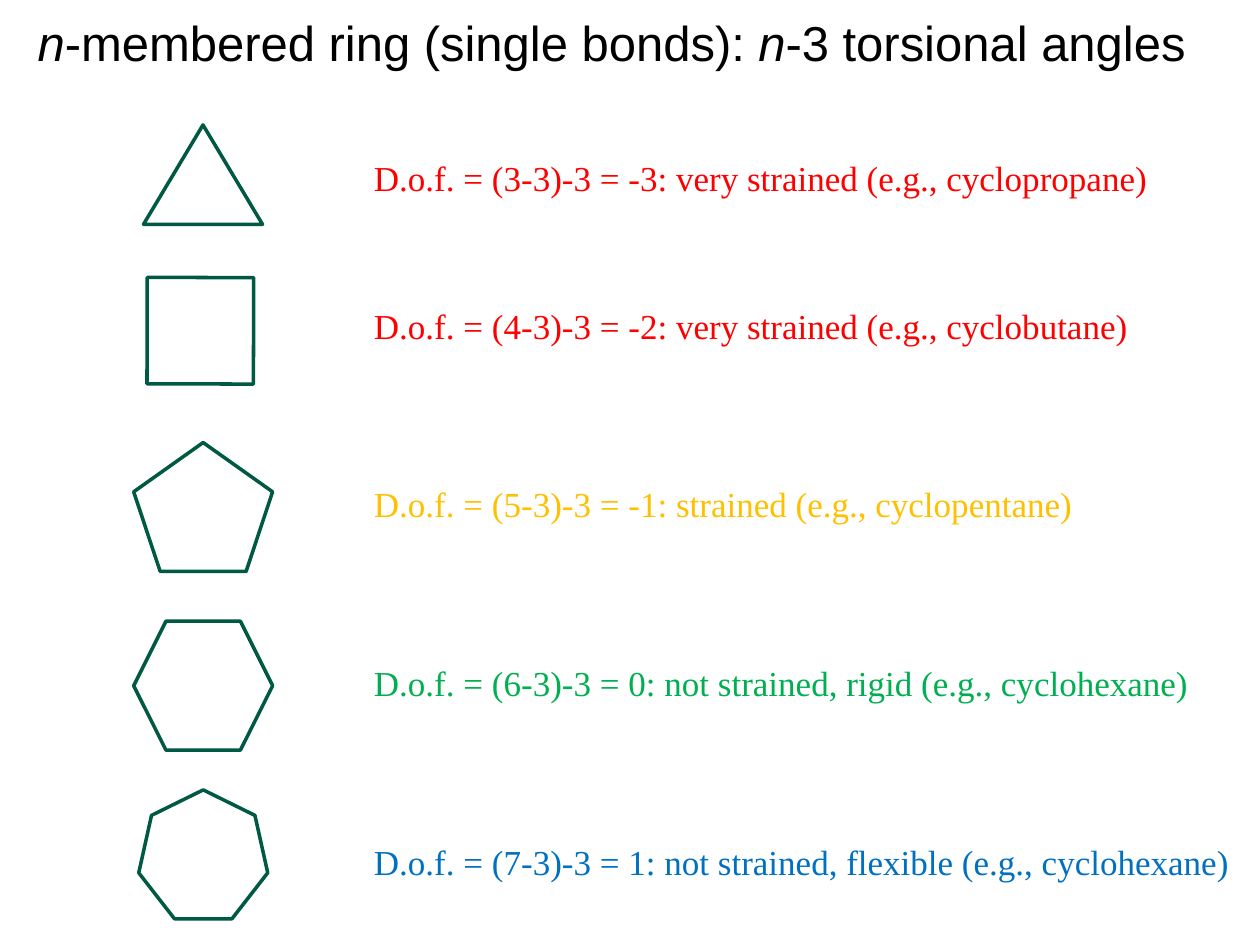
from pptx import Presentation
from pptx.dml.color import RGBColor
from pptx.enum.shapes import MSO_SHAPE
from pptx.enum.text import MSO_AUTO_SIZE
from pptx.util import Pt

BLACK = RGBColor(0x00, 0x00, 0x00)
PINE = RGBColor(0x00, 0x59, 0x43)
RED = RGBColor(0xFF, 0x00, 0x00)
AMBER = RGBColor(0xFF, 0xC0, 0x00)
GREEN = RGBColor(0x00, 0xB0, 0x50)
BLUE = RGBColor(0x00, 0x70, 0xC0)

NOTE_LEFT = 206.6
NOTE_HEIGHT = 31.5

# ring size, shape, rotation, ring box, note top, note width, verdict, colour
RINGS = [
    (3, MSO_SHAPE.ISOSCELES_TRIANGLE, 0, (82, 71.4, 68, 56.8), 85.7, 459.4,
     "very strained (e.g., cyclopropane)", RED),
    (4, MSO_SHAPE.DIAMOND, 315.1, (71.5, 146, 86, 86), 170.7, 459.4,
     "very strained (e.g., cyclobutane)", RED),
    (5, MSO_SHAPE.REGULAR_PENTAGON, 0, (76.4, 252.9, 79.4, 73.7), 272.4, 459.4,
     "strained (e.g., cyclopentane)", AMBER),
    (6, MSO_SHAPE.HEXAGON, 0, (76.4, 355, 79.4, 73.7), 374.4, 481.7,
     "not strained, rigid (e.g., cyclohexane)", GREEN),
    (7, MSO_SHAPE.HEPTAGON, 0, (79.3, 451.4, 73.7, 73.7), 476.6, 504.7,
     "not strained, flexible (e.g., cyclohexane)", BLUE),
]


def add_text(slide, box, runs, font, size, color):
    """Add one line of text; runs holds (words, italic) pairs."""
    frame = slide.shapes.add_textbox(*map(Pt, box)).text_frame
    frame.word_wrap = True
    frame.auto_size = MSO_AUTO_SIZE.SHAPE_TO_FIT_TEXT
    for words, italic in runs:
        run = frame.paragraphs[0].add_run()
        run.text = words
        run.font.name = font
        run.font.size = Pt(size)
        run.font.italic = italic
        run.font.color.rgb = color


def add_title(slide, box):
    runs = [("n", True), ("-membered ring (single bonds): ", False),
            ("n", True), ("-3 torsional angles", False)]
    add_text(slide, box, runs, font="Arial", size=28, color=BLACK)


def add_ring(slide, box, kind, turn):
    ring = slide.shapes.add_shape(kind, *map(Pt, box))
    ring.rotation = turn
    ring.shadow.inherit = False
    ring.fill.background()
    ring.line.color.rgb = PINE
    ring.line.width = Pt(2)


def add_note(slide, box, count, verdict, color):
    """State the degrees of freedom of a ring with count members."""
    words = f"D.o.f. = ({count}-3)-3 = {count - 6}: {verdict}"
    add_text(slide, box, [(words, False)], font="Times New Roman", size=20,
             color=color)


def main():
    deck = Presentation()
    deck.slide_width, deck.slide_height = Pt(720), Pt(540)
    slide = deck.slides.add_slide(deck.slide_layouts[6])
    add_title(slide, (14.4, 3.6, 686, 41.2))
    for count, kind, turn, box, top, width, verdict, color in RINGS:
        add_ring(slide, box, kind, turn)
        add_note(slide, (NOTE_LEFT, top, width, NOTE_HEIGHT), count, verdict,
                 color)
    deck.save("out.pptx")


if __name__ == "__main__":
    main()
